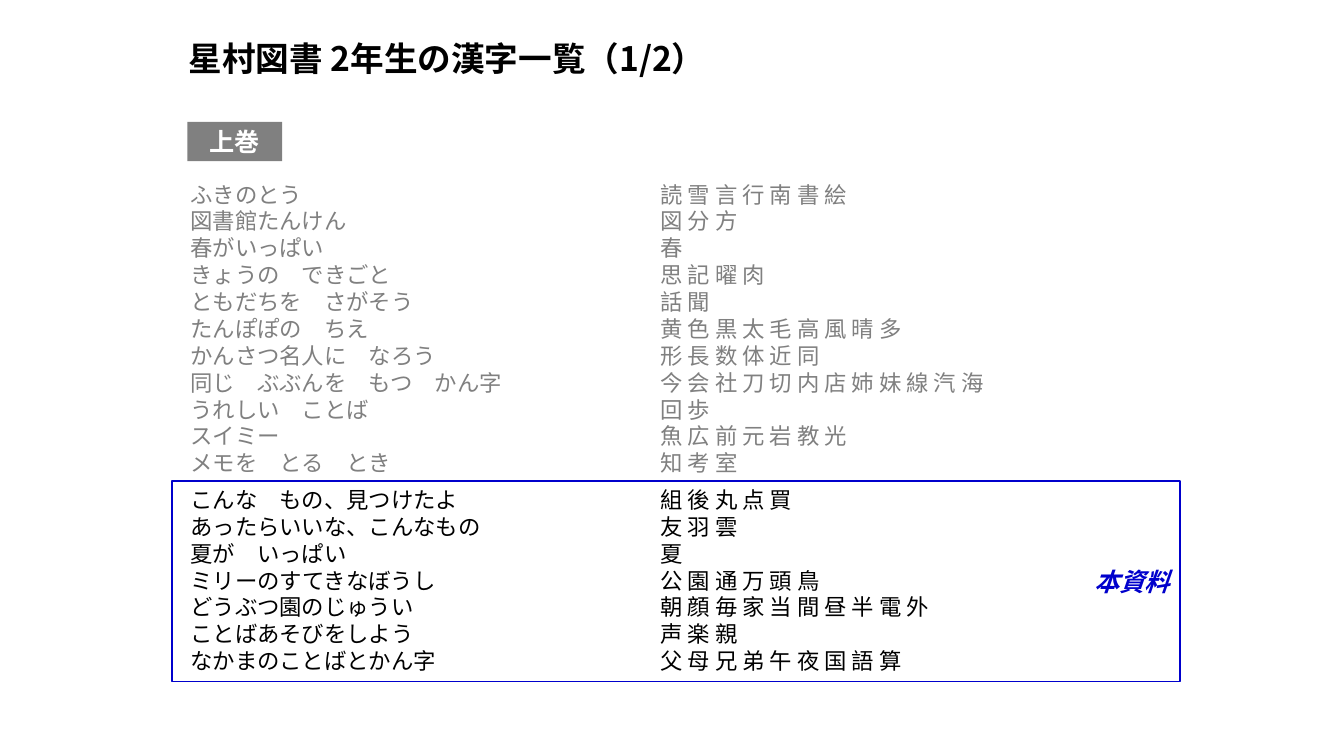
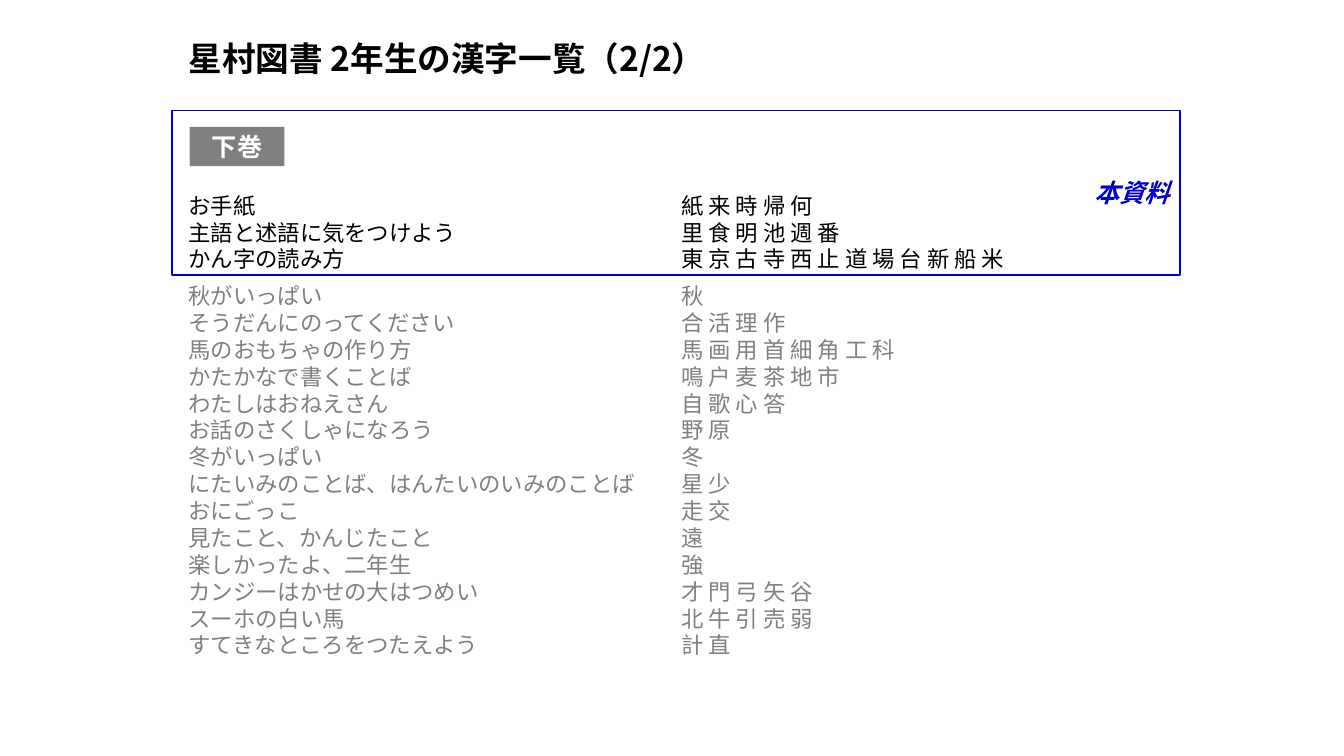
import pptx
import pptx.dml.color
import pptx.enum.shapes
import pptx.enum.text
import pptx.util
import lxml.etree
from pptx.oxml.ns import qn

Cm = pptx.util.Cm
Pt = pptx.util.Pt
ALIGN = pptx.enum.text.PP_ALIGN
ANCHOR = pptx.enum.text.MSO_ANCHOR

VOLUMES = [
    {
        "title": "星村図書 2年生の漢字一覧（1/2）",
        "volume": "上巻",
        "badge_at": (4.72, 3.07),
        "list_at": (4.55, 4.43, 24.28, 13.26),
        "kanji_column": 11.85,
        "frame_at": (4.34, 12.12, 25.4, 5.05),
        "groups": [
            (False, [
                ("ふきのとう", "読雪言行南書絵"),
                ("図書館たんけん", "図分方"),
                ("春がいっぱい", "春"),
                ("きょうの　できごと", "思記曜肉"),
                ("ともだちを　さがそう", "話聞"),
                ("たんぽぽの　ちえ", "黄色黒太毛高風晴多"),
                ("かんさつ名人に　なろう", "形長数体近同"),
                ("同じ　ぶぶんを　もつ　かん字", "今会社刀切内店姉妹線汽海"),
                ("うれしい　ことば", "回歩"),
                ("スイミー", "魚広前元岩教光"),
                ("メモを　とる　とき", "知考室"),
            ]),
            (True, [
                ("こんな　もの、見つけたよ", "組後丸点買"),
                ("あったらいいな、こんなもの", "友羽雲"),
                ("夏が　いっぱい", "夏"),
                ("ミリーのすてきなぼうし", "公園通万頭鳥"),
                ("どうぶつ園のじゅうい", "朝顔毎家当間昼半電外"),
                ("ことばあそびをしよう", "声楽親"),
                ("なかまのことばとかん字", "父母兄弟午夜国語算"),
            ]),
        ],
    },
    {
        "title": "星村図書 2年生の漢字一覧（2/2）",
        "volume": "下巻",
        "badge_at": (4.78, 3.2),
        "list_at": (4.5, 4.71, 24.28, 12.57),
        "kanji_column": 12.42,
        "frame_at": (4.34, 2.79, 25.4, 4.14),
        "groups": [
            (True, [
                ("お手紙", "紙来時帰何"),
                ("主語と述語に気をつけよう", "里食明池週番"),
                ("かん字の読み方", "東京古寺西止道場台新船米"),
            ]),
            (False, [
                ("秋がいっぱい", "秋"),
                ("そうだんにのってください", "合活理作"),
                ("馬のおもちゃの作り方", "馬画用首細角工科"),
                ("かたかなで書くことば", "鳴戸麦茶地市"),
                ("わたしはおねえさん", "自歌心答"),
                ("お話のさくしゃになろう", "野原"),
                ("冬がいっぱい", "冬"),
                ("にたいみのことば、はんたいのいみのことば", "星少"),
                ("おにごっこ", "走交"),
                ("見たこと、かんじたこと", "遠"),
                ("楽しかったよ、二年生", "強"),
                ("カンジーはかせの大はつめい", "才門弓矢谷"),
                ("スーホの白い馬", "北牛引売弱"),
                ("すてきなところをつたえよう", "計直"),
            ]),
        ],
    },
]


def color(hex_code):
    return pptx.dml.color.RGBColor.from_string(hex_code)


class KanjiDeck:
    FONT = "Noto Sans CJK JP"
    BLACK, GRAY, BLUE, WHITE = "000000", "808080", "0000CC", "FFFFFF"
    LINE_HEIGHT = 1.2
    GROUP_GAP = Pt(7)

    def __init__(self):
        self.deck = pptx.Presentation()
        self.deck.slide_width = Cm(33.87)
        self.deck.slide_height = Cm(19.05)
        self.slide = None

    def style(self, paragraph, size, hex_code, bold=False, italic=False):
        for run in paragraph.runs:
            font = run.font
            font.size, font.bold, font.italic = Pt(size), bold, italic
            font.color.rgb = color(hex_code)
            font.name = self.FONT
            east_asian = lxml.etree.SubElement(font._element, qn("a:ea"))
            east_asian.set("typeface", self.FONT)

    def add_slide(self, title):
        self.slide = self.deck.slides.add_slide(self.deck.slide_layouts[5])
        heading = self.slide.shapes.title
        heading.left, heading.top = Cm(4.5), Cm(0.82)
        heading.width, heading.height = Cm(24.61), Cm(1.3)
        frame = heading.text_frame
        frame.text = title
        frame.auto_size = pptx.enum.text.MSO_AUTO_SIZE.NONE
        frame.vertical_anchor = ANCHOR.TOP
        line = frame.paragraphs[0]
        line.alignment = ALIGN.LEFT
        line.line_spacing = Pt(24 * self.LINE_HEIGHT)
        self.style(line, 24, self.BLACK, bold=True)

    def add_kanji_list(self, groups, place, kanji_column):
        """Write lesson names and, at a tab stop, the kanji of each lesson."""
        frame = self.slide.shapes.add_textbox(*map(Cm, place)).text_frame
        frame.word_wrap = True
        entries = [(covered, index, *lesson) for covered, lessons in groups
                   for index, lesson in enumerate(lessons)]
        for number, (covered, index, lesson, kanji) in enumerate(entries):
            line = frame.add_paragraph() if number else frame.paragraphs[0]
            line.text = lesson + "\t" + " ".join(kanji)
            line.line_spacing = Pt(16 * self.LINE_HEIGHT)
            if number and index == 0:
                line.space_before = self.GROUP_GAP
            stops = lxml.etree.SubElement(line._p.get_or_add_pPr(), qn("a:tabLst"))
            lxml.etree.SubElement(stops, qn("a:tab"), pos=str(Cm(kanji_column)), algn="l")
            self.style(line, 16, self.BLACK if covered else self.GRAY)

    def add_box(self, text, place, alignment):
        box = self.slide.shapes.add_shape(
            pptx.enum.shapes.MSO_SHAPE.RECTANGLE, *map(Cm, place))
        box.shadow.inherit = False
        box.text_frame.text = text
        box.text_frame.vertical_anchor = ANCHOR.MIDDLE
        box.text_frame.paragraphs[0].alignment = alignment
        return box

    def add_volume_badge(self, volume, corner):
        badge = self.add_box(volume, (*corner, 2.39, 0.99), ALIGN.CENTER)
        badge.fill.solid()
        badge.fill.fore_color.rgb = color(self.GRAY)
        badge.line.fill.background()
        self.style(badge.text_frame.paragraphs[0], 18, self.WHITE, bold=True)

    def add_coverage_frame(self, place):
        """Outline the lessons that this material covers."""
        outline = self.add_box("本資料", place, ALIGN.RIGHT)
        outline.fill.background()
        outline.line.color.rgb = color(self.BLUE)
        outline.line.width = Pt(1)
        self.style(outline.text_frame.paragraphs[0], 18, self.BLUE, bold=True, italic=True)


def main():
    kanji_deck = KanjiDeck()
    for volume in VOLUMES:
        kanji_deck.add_slide(volume["title"])
        kanji_deck.add_kanji_list(volume["groups"], volume["list_at"], volume["kanji_column"])
        kanji_deck.add_volume_badge(volume["volume"], volume["badge_at"])
        kanji_deck.add_coverage_frame(volume["frame_at"])
    kanji_deck.deck.save("out.pptx")


if __name__ == "__main__":
    main()
